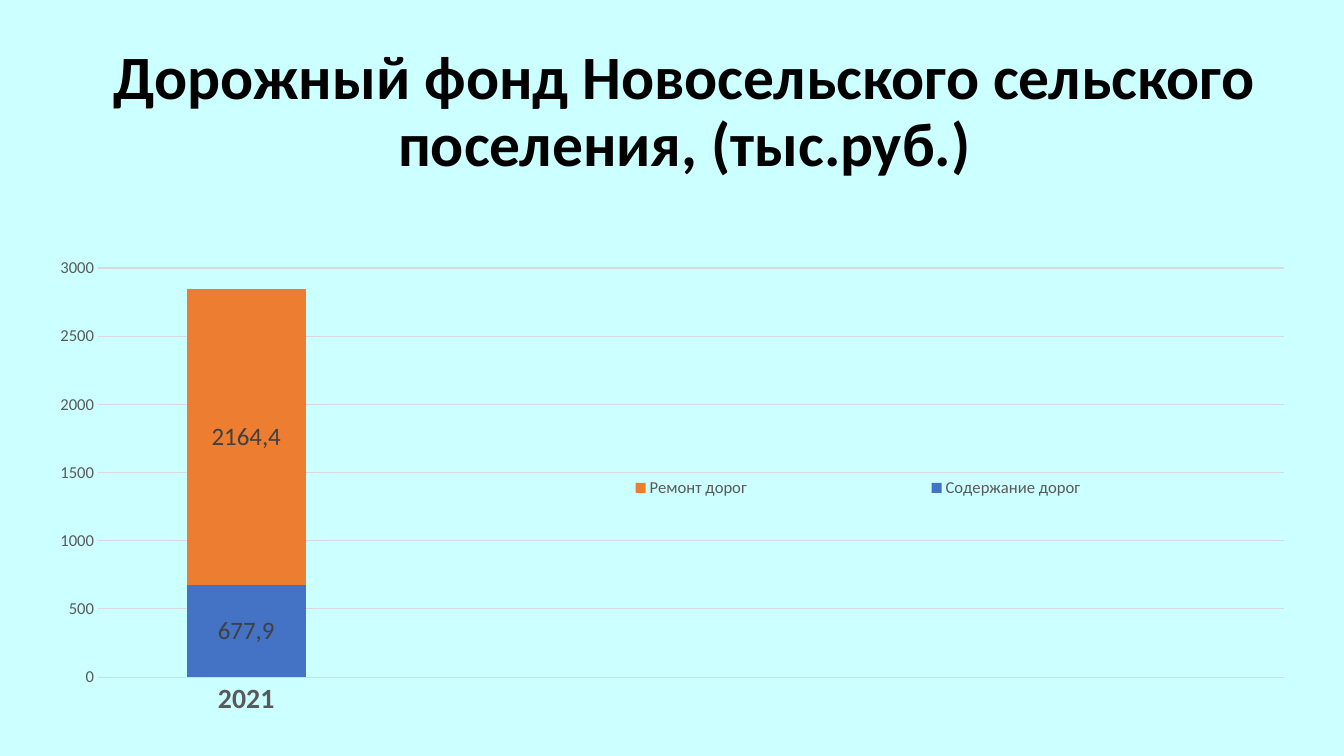
"""Build the road fund slide: a title above a stacked column chart."""
from lxml import etree
from pptx import Presentation
from pptx.chart.data import CategoryChartData
from pptx.dml.color import RGBColor
from pptx.enum.chart import XL_CHART_TYPE, XL_LABEL_POSITION, XL_LEGEND_POSITION, XL_TICK_MARK
from pptx.enum.text import MSO_ANCHOR, PP_ALIGN
from pptx.oxml.ns import qn
from pptx.util import Cm, Pt

BLACK = RGBColor(0x00, 0x00, 0x00)
AQUA = RGBColor(0xCC, 0xFF, 0xFF)
BLUE = RGBColor(0x44, 0x72, 0xC4)
ORANGE = RGBColor(0xED, 0x7D, 0x31)
DARK = RGBColor(0x40, 0x40, 0x40)
GREY = RGBColor(0x59, 0x59, 0x59)
LIGHT = RGBColor(0xD9, 0xD9, 0xD9)
FONT = "Calibri"

TITLE = "Дорожный фонд Новосельского сельского поселения, (тыс.руб.)"
YEARS = ["2021", "", "", ""]
SERIES = [
    ("Содержание дорог", 677.9, "677,9", BLUE),
    ("Ремонт дорог", 2164.4, "2164,4", ORANGE),
]
PLOT_BOX = {"x": 0.02, "y": 0.13, "w": 0.96, "h": 0.8}
LEGEND_BOX = {"x": 0.31, "y": 0.51, "w": 0.65, "h": 0.1}


def style(font, size, color, bold=False):
    font.name, font.size, font.bold = FONT, Pt(size), bold
    font.color.rgb = color


def rule(line):
    line.color.rgb = LIGHT
    line.width = Pt(0.75)


def make_layout(box, inner=False):
    layout = etree.Element(qn("c:layout"))
    manual = etree.SubElement(layout, qn("c:manualLayout"))
    modes = {"layoutTarget": "inner"} if inner else {}
    modes.update(xMode="edge", yMode="edge")
    for tag, val in {**modes, **box}.items():
        etree.SubElement(manual, qn(f"c:{tag}")).set("val", str(val))
    return layout


def add_title(s):
    sp = s.shapes.add_textbox(Cm(2.33), Cm(1.01), Cm(29.85), Cm(3.68))
    sp.fill.solid()
    sp.fill.fore_color.rgb = AQUA
    tf = sp.text_frame
    tf.word_wrap = True
    tf.vertical_anchor = MSO_ANCHOR.MIDDLE
    p = tf.paragraphs[0]
    p.alignment = PP_ALIGN.CENTER
    p.line_spacing = 0.9
    r = p.add_run()
    r.text = TITLE
    style(r.font, 44, BLACK, True)


def add_fund_chart(s):
    data = CategoryChartData()
    data.categories = YEARS
    for name, value, _, _ in SERIES:
        data.add_series(name, [value] + [None] * (len(YEARS) - 1))
    chart = s.shapes.add_chart(
        XL_CHART_TYPE.COLUMN_STACKED, Cm(1.52), Cm(5.08), Cm(31.47), Cm(12.95), data
    ).chart
    style(chart.font, 10, BLACK)
    chart.has_title = False

    plot = chart.plots[0]
    plot.gap_width, plot.overlap = 150, 100
    plot.vary_by_categories = False
    for ser, (_, _, label, color) in zip(plot.series, SERIES):
        ser.format.fill.solid()
        ser.format.fill.fore_color.rgb = color
        ser.invert_if_negative = False
        labels = ser.data_labels
        labels.show_value = True
        labels.position = XL_LABEL_POSITION.CENTER
        style(labels.font, 18, DARK)
        point_label = ser.points[0].data_label
        r = point_label.text_frame.paragraphs[0].add_run()
        r.text = label
        style(r.font, 18, DARK)
        point_label.position = XL_LABEL_POSITION.CENTER

    years, values = chart.category_axis, chart.value_axis
    for axis, size, bold in ((years, 20, True), (values, 12, False)):
        axis.major_tick_mark = axis.minor_tick_mark = XL_TICK_MARK.NONE
        style(axis.tick_labels.font, size, GREY, bold)
    rule(years.format.line)
    values.format.line.fill.background()
    values.minimum_scale, values.maximum_scale, values.major_unit = 0, 3000, 500
    values.has_major_gridlines = True
    rule(values.major_gridlines.format.line)

    chart.has_legend = True
    legend = chart.legend
    legend.position = XL_LEGEND_POSITION.RIGHT
    legend.include_in_layout = False
    style(legend.font, 12, GREY)

    area = chart.element.find(".//" + qn("c:plotArea"))
    for old in area.findall(qn("c:layout")):
        area.remove(old)
    area.insert(0, make_layout(PLOT_BOX, inner=True))
    key = chart.element.find(".//" + qn("c:legend"))
    for old in key.findall(qn("c:layout")):
        key.remove(old)
    key.find(qn("c:legendPos")).addnext(make_layout(LEGEND_BOX))


def main():
    prs = Presentation()
    prs.slide_width, prs.slide_height = Cm(33.87), Cm(19.05)
    s = prs.slides.add_slide(prs.slide_layouts[6])
    s.background.fill.solid()
    s.background.fill.fore_color.rgb = AQUA
    add_title(s)
    add_fund_chart(s)
    prs.save("out.pptx")


if __name__ == "__main__":
    main()
